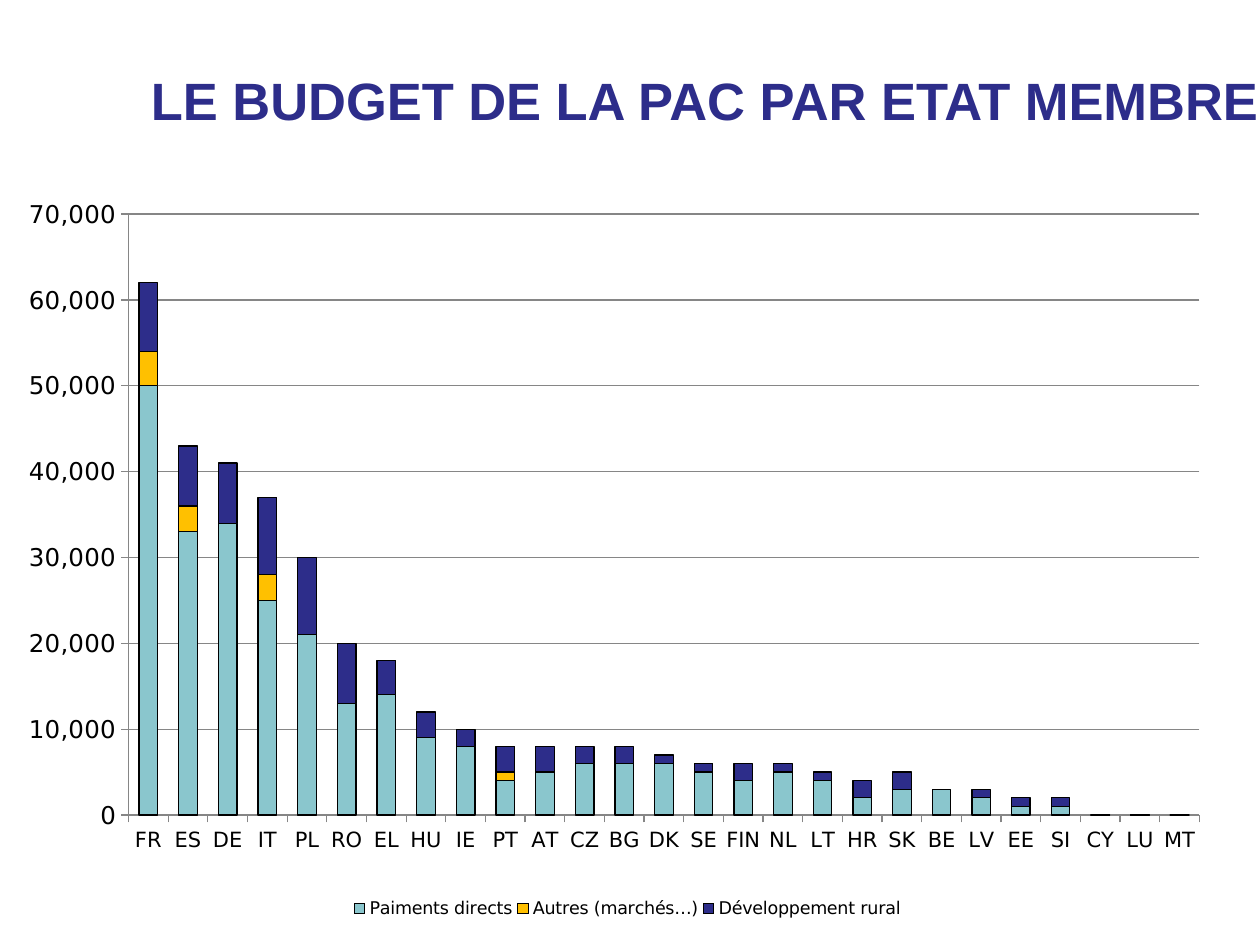
from lxml import etree
from pptx import Presentation
from pptx.chart.data import CategoryChartData
from pptx.dml.color import RGBColor
from pptx.enum.chart import XL_CHART_TYPE as ChartType
from pptx.enum.chart import XL_LEGEND_POSITION as LegendPosition
from pptx.enum.chart import XL_TICK_MARK as TickMark
from pptx.enum.text import PP_ALIGN as Align
from pptx.oxml.ns import qn
from pptx.util import Inches, Pt

NAVY, BLACK, GREY = "2D2D8A", "000000", "868686"
SERIES_COLORS = ("8AC6CD", "FFC000", NAVY)
SERIES_NAMES = ("Paiments directs", "Autres (marchés…)", "Développement rural")

# Left, top, width and height in inches, relative to the chart
PLOT_BOX = (1.13, 0.71, 8.5, 4.77)
LEGEND_BOX = (2.88, 6.09, 4.42, 0.26)

# Member state: direct payments, other, rural development
BUDGETS = {
    "FR": (50000, 4000, 8000),
    "ES": (33000, 3000, 7000),
    "DE": (34000, 0, 7000),
    "IT": (25000, 3000, 9000),
    "PL": (21000, 0, 9000),
    "RO": (13000, 0, 7000),
    "EL": (14000, 0, 4000),
    "HU": (9000, 0, 3000),
    "IE": (8000, 0, 2000),
    "PT": (4000, 1000, 3000),
    "AT": (5000, 0, 3000),
    "CZ": (6000, 0, 2000),
    "BG": (6000, 0, 2000),
    "DK": (6000, 0, 1000),
    "SE": (5000, 0, 1000),
    "FIN": (4000, 0, 2000),
    "NL": (5000, 0, 1000),
    "LT": (4000, 0, 1000),
    "HR": (2000, 0, 2000),
    "SK": (3000, 0, 2000),
    "BE": (3000, 0, 0),
    "LV": (2000, 0, 1000),
    "EE": (1000, 0, 1000),
    "SI": (1000, 0, 1000),
    "CY": (0, 0, 0),
    "LU": (0, 0, 0),
    "MT": (0, 0, 0),
}


def color(value):
    return RGBColor.from_string(value)


def format_font(font, fill=BLACK, **values):
    for name, value in values.items():
        setattr(font, name, value)
    font.color.rgb = color(fill)


def format_line(line, fill, width=0.75):
    line.color.rgb = color(fill)
    line.width = Pt(width)


def add_title(slide, left, top, width, height):
    frame = slide.shapes.add_textbox(left, top, width, height).text_frame
    frame.word_wrap = True
    paragraph = frame.paragraphs[0]
    paragraph.alignment = Align.CENTER
    run = paragraph.add_run()
    run.text = "LE BUDGET DE LA PAC PAR ETAT MEMBRE"
    format_font(run.font, NAVY, name="Arial", size=Pt(30), bold=True)


def set_layout(parent, position, box, chart_size, **target):
    """Fix a chart part at a box in inches, stored as fractions of the chart."""
    for old_layout in parent.findall(qn("c:layout")):
        parent.remove(old_layout)
    layout = etree.Element(qn("c:layout"))
    manual = etree.SubElement(layout, qn("c:manualLayout"))
    fractions = [Inches(length) / size for length, size in zip(box, chart_size * 2)]
    settings = {**target, "xMode": "edge", "yMode": "edge", **dict(zip("xywh", fractions))}
    for name, value in settings.items():
        etree.SubElement(manual, qn(f"c:{name}")).set("val", str(value))
    parent.insert(position, layout)


def format_axis(axis, size):
    axis.major_tick_mark = TickMark.OUTSIDE
    axis.minor_tick_mark = TickMark.NONE
    format_font(axis.tick_labels.font, name="DejaVu Sans", size=Pt(size))
    format_line(axis.format.line, GREY)


def add_budget_chart(slide, left, top, width, height):
    data = CategoryChartData(number_format="#,##0")
    data.categories = list(BUDGETS)
    for name, values in zip(SERIES_NAMES, zip(*BUDGETS.values())):
        data.add_series(name, values)
    chart = slide.shapes.add_chart(
        ChartType.COLUMN_STACKED, left, top, width, height, data).chart
    chart.has_title = False
    format_font(chart.font, name="DejaVu Sans", size=Pt(10))

    plot = chart.plots[0]
    plot.vary_by_categories = False
    plot.gap_width, plot.overlap = 115, 100
    for series, fill in zip(plot.series, SERIES_COLORS):
        series.format.fill.solid()
        series.format.fill.fore_color.rgb = color(fill)
        format_line(series.format.line, BLACK)

    format_axis(chart.category_axis, 12)
    value_axis = chart.value_axis
    format_axis(value_axis, 14)
    value_axis.minimum_scale, value_axis.maximum_scale = 0, 70000
    value_axis.major_unit = 10000
    value_axis.tick_labels.number_format = "#,##0"
    value_axis.tick_labels.number_format_is_linked = False
    value_axis.has_major_gridlines = True
    format_line(value_axis.major_gridlines.format.line, GREY)

    chart.has_legend = True
    chart.legend.position = LegendPosition.BOTTOM
    chart.legend.include_in_layout = False
    chart_element = chart._chartSpace.chart
    set_layout(chart_element.plotArea, 0, PLOT_BOX, (width, height), layoutTarget="inner")
    set_layout(chart_element.find(qn("c:legend")), 1, LEGEND_BOX, (width, height))


def main():
    presentation = Presentation()
    presentation.slide_width, presentation.slide_height = Inches(10), Inches(7.5)
    slide = presentation.slides.add_slide(presentation.slide_layouts[6])
    add_budget_chart(slide, Inches(-0.11), Inches(0.99), Inches(10.18), Inches(6.66))
    add_title(slide, Inches(0.75), Inches(0.49), Inches(9.69), Inches(0.61))
    presentation.save("out.pptx")


if __name__ == "__main__":
    main()
